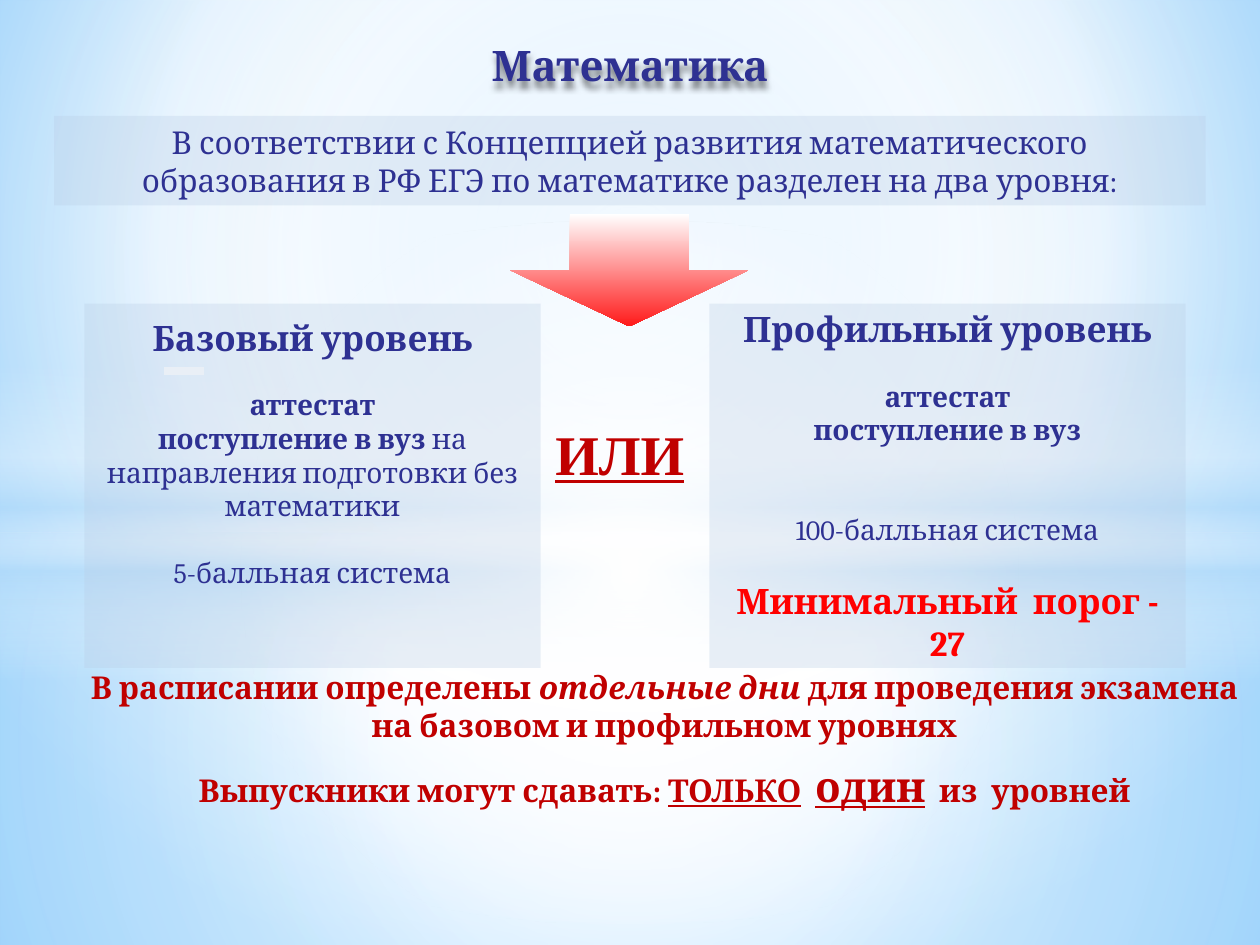
import pptx
import pptx.util
import pptx.dml.color
import pptx.enum.shapes
import pptx.enum.text
import pptx.oxml
import pptx.oxml.ns

Inches, Pt = pptx.util.Inches, pptx.util.Pt
SHAPE = pptx.enum.shapes.MSO_SHAPE
ANCHOR = pptx.enum.text.MSO_ANCHOR
AUTO = pptx.enum.text.MSO_AUTO_SIZE
qn = pptx.oxml.ns.qn

BLUE, DARK_RED, RED, PANEL = "2E3192", "C00000", "FF0000", "B9CDE5"
WHITE, SKY = "FFFFFF", "B4DCFA"
CENTER = (50, 50, 50, 50)

BACKGROUND = [(0, "9ED5FF", 100), (60, WHITE, 100), (100, "5BB9FF", 100)]
BACKDROP = [
    (SHAPE.RECTANGLE, (0, 4.23, 10, 3.27), CENTER,
     [(0, WHITE, 91), (37, WHITE, 76), (100, SKY, 79)]),
    (SHAPE.RECTANGLE, (0, 0, 10, 4.23), CENTER,
     [(0, WHITE, 89), (48, WHITE, 62), (100, SKY, 79)]),
    (SHAPE.RECTANGLE, (0, 2.9, 10, 2.5), None,
     [(0, WHITE, 0), (29, WHITE, 30), (45, SKY, 40), (55, WHITE, 26),
      (65, SKY, 60), (100, WHITE, 0)]),
    (SHAPE.OVAL, (0, 1.75, 10, 5.58), CENTER,
     [(0, WHITE, 100), (54, WHITE, 0)]),
    (SHAPE.RECTANGLE, (1.3, 2.91, 0.32, 0.07), None,
     [(0, WHITE, 100), (100, WHITE, 100)]),
]
ARROW = [(0, WHITE, 100), (100, "FF1A1A", 100)]

TITLE = [(0, [("Математика", 24, "b")])]
INTRO = [(0, [("В соответствии с Концепцией развития математического "
               "образования в РФ ЕГЭ по математике разделен на два уровня:", 18, "")])]
BASIC = [
    (0, [("Базовый уровень", 20, "b")]),
    (17, [("аттестат", 16, "b")]),
    (0, [("поступление в вуз ", 16, "b"),
         ("на направления подготовки без математики", 16, "")]),
    (19, [("5-балльная система", 16, "")]),
]
PROFILE = [
    (0, [("Профильный уровень", 20, "b")]),
    (17, [("аттестат", 16, "b")]),
    (0, [("поступление в вуз", 16, "b")]),
    (38, [("100-балльная система", 16, "")]),
    (19, [("Минимальный  порог - 27", 20, "b", RED)]),
]
CHOICE = [(0, [("ИЛИ", 32, "bu")])]
SCHEDULE = [
    (10, [("В расписании определены ", 18, "b"), ("отдельные дни ", 18, "bi"),
          ("для проведения экзамена на базовом и профильном уровнях", 18, "b")]),
    (10, [("Выпускники могут сдавать: ", 18, "b"), ("ТОЛЬКО", 18, "bu"),
          ("  ", 18, "b"), ("один", 24, "bu"), ("  из  уровней", 18, "b")]),
]


def rgb(value):
    return pptx.dml.color.RGBColor.from_string(value)


def gradient(stops, focus):
    xml = "".join(
        f'<a:gs pos="{pos * 1000}"><a:srgbClr val="{color}">'
        f'<a:alpha val="{alpha * 1000}"/></a:srgbClr></a:gs>'
        for pos, color, alpha in stops)
    if focus:
        l, t, r, b = (v * 1000 for v in focus)
        shade = (f'<a:path path="circle"><a:fillToRect l="{l}" t="{t}" '
                 f'r="{r}" b="{b}"/></a:path>')
    else:
        shade = '<a:lin ang="5400000" scaled="0"/>'
    return pptx.oxml.parse_xml(
        f'<a:gradFill {pptx.oxml.ns.nsdecls("a")} rotWithShape="1">'
        f'<a:gsLst>{xml}</a:gsLst>{shade}</a:gradFill>')


def swap_fill(props, stops, focus):
    old = props.find(qn("a:solidFill"))
    props.replace(old, gradient(stops, focus))


def add_shape(slide, kind, box, color=WHITE):
    sp = slide.shapes.add_shape(kind, *map(Inches, box))
    sp.shadow.inherit = False
    sp.fill.solid()
    sp.fill.fore_color.rgb = rgb(color)
    sp.line.fill.background()
    return sp


def add_gradient(slide, kind, box, focus, stops):
    sp = add_shape(slide, kind, box)
    swap_fill(sp._element.spPr, stops, focus)


def write(sp, paragraphs, color, font="Cambria", anchor=ANCHOR.MIDDLE, top=0.05):
    tf = sp.text_frame
    tf.word_wrap = True
    tf.auto_size = AUTO.NONE
    tf.vertical_anchor = anchor
    tf.margin_top, tf.margin_bottom = Inches(top), Inches(0.05)
    tf.margin_left = tf.margin_right = Inches(0.1)
    for i, (before, runs) in enumerate(paragraphs):
        p = tf.add_paragraph() if i else tf.paragraphs[0]
        p.alignment = pptx.enum.text.PP_ALIGN.CENTER
        p.space_before = Pt(before)
        for text, size, style, *own in runs:
            r = p.add_run()
            r.text = text
            r.font.name, r.font.size = font, Pt(size)
            r.font.bold, r.font.italic = "b" in style, "i" in style
            r.font.underline = "u" in style
            r.font.color.rgb = rgb(own[0] if own else color)


def add_panel(slide, box, paragraphs, **layout):
    sp = add_shape(slide, SHAPE.RECTANGLE, box, PANEL)
    color = sp._element.spPr.find(qn("a:solidFill"))[0]
    color.append(pptx.oxml.parse_xml(
        f'<a:alpha {pptx.oxml.ns.nsdecls("a")} val="31000"/>'))
    write(sp, paragraphs, BLUE, **layout)


def add_text(slide, box, paragraphs, **layout):
    sp = slide.shapes.add_textbox(*map(Inches, box))
    write(sp, paragraphs, DARK_RED, anchor=ANCHOR.TOP, **layout)


def add_title(slide):
    sp = slide.shapes.title
    sp.left, sp.top, sp.width, sp.height = map(Inches, (0.43, 0.26, 9.14, 0.5))
    write(sp, TITLE, BLUE)
    sp._element.spPr.append(pptx.oxml.parse_xml(
        f'<a:effectLst {pptx.oxml.ns.nsdecls("a")}>'
        '<a:outerShdw blurRad="50800" dist="50800" dir="5400000">'
        '<a:srgbClr val="000000"><a:alpha val="50000"/></a:srgbClr>'
        '</a:outerShdw></a:effectLst>'))
    slide.shapes._spTree.append(sp._element)


def main():
    prs = pptx.Presentation()
    prs.slide_width, prs.slide_height = Inches(10), Inches(7.5)
    slide = prs.slides.add_slide(prs.slide_layouts[5])
    slide.background.fill.solid()
    slide.background.fill.fore_color.rgb = rgb(WHITE)
    swap_fill(next(slide._element.iter(qn("p:bgPr"))), BACKGROUND, (20, 10, 20, 60))
    for kind, box, focus, stops in BACKDROP:
        add_gradient(slide, kind, box, focus, stops)
    add_title(slide)
    add_text(slide, (0.55, 5.25, 9.45, 1.15), SCHEDULE)
    add_panel(slide, (0.67, 2.41, 3.62, 2.89), BASIC, anchor=ANCHOR.TOP, top=0.1)
    add_panel(slide, (5.63, 2.41, 3.78, 2.89), PROFILE, anchor=ANCHOR.TOP, top=0.03)
    add_gradient(slide, SHAPE.DOWN_ARROW, (4.05, 1.7, 1.89, 0.89), None, ARROW)
    add_panel(slide, (0.43, 0.92, 9.14, 0.71), INTRO)
    add_text(slide, (4.29, 3.28, 1.26, 0.64), CHOICE, font="Times New Roman")
    prs.save("out.pptx")


if __name__ == "__main__":
    main()
